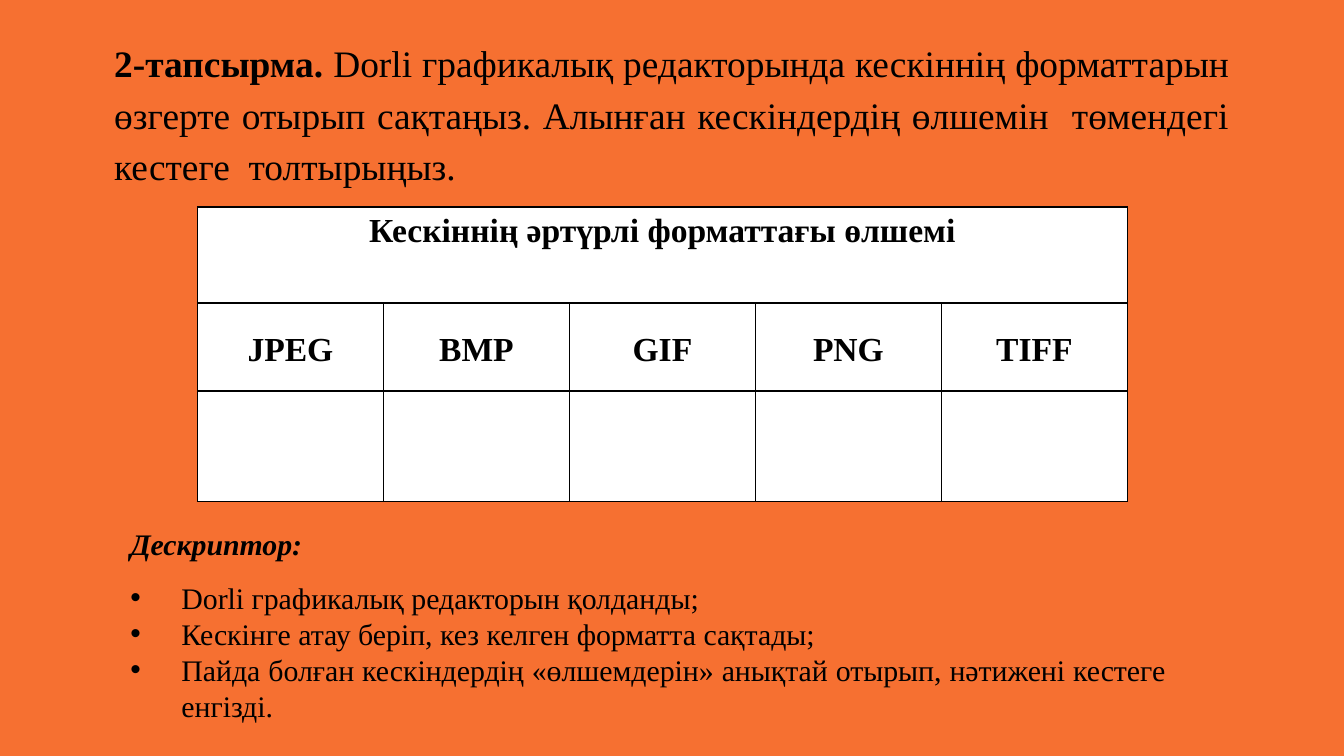
from lxml import etree
from pptx import Presentation
from pptx.dml.color import RGBColor
from pptx.enum import text
from pptx.oxml import ns
from pptx.util import Pt

# Content
TASK = [("2-тапсырма. ", True),
        ("Dorli графикалық редакторында кескіннің форматтарын өзгерте отырып "
         "сақтаңыз. Алынған кескіндердің өлшемін  төмендегі кестеге  толтырыңыз.", False)]
TABLE_HEADING = "Кескіннің әртүрлі форматтағы өлшемі"
FORMATS = ["JPEG", "BMP", "GIF", "PNG", "TIFF"]
CRITERIA_HEADING = "Дескриптор:"
CRITERIA = ["Dorli графикалық редакторын қолданды;",
            "Кескінге атау беріп, кез келген форматта сақтады;",
            "Пайда болған кескіндердің «өлшемдерін» анықтай отырып, нәтижені кестеге енгізді."]

# Style and layout, in points
FONT, ORANGE, BLACK, WHITE = "Times New Roman", "F67031", "000000", "FFFFFF"
TASK_BOX = (54, 14.4, 612, 89.3)
CRITERIA_BOX = (62.6, 275, 569.5, 117.4)
TABLE_LEFT, TABLE_TOP, TABLE_WIDTH = 105.8, 110.9, 498.2
ROW_HEIGHTS = [51.4, 47.2, 59.2]
INDENT = 27.4
ALIGN, ANCHOR = text.PP_ALIGN, text.MSO_ANCHOR


def color(value):
    return RGBColor.from_string(value)


def add_run(paragraph, content, size, bold=False, italic=False):
    run = paragraph.add_run()
    run.text = content
    font = run.font
    font.name, font.size, font.bold, font.italic = FONT, Pt(size), bold, italic
    font.color.rgb = color(BLACK)


def set_spacing(paragraph, align, line=1.15, after=10):
    paragraph.alignment = align
    paragraph.line_spacing = line
    paragraph.space_before = Pt(0)
    paragraph.space_after = Pt(after)


def add_child(parent, tag, **attributes):
    return etree.SubElement(parent, ns.qn(tag), attributes)


def set_bullet(paragraph, char=None):
    properties = paragraph._p.get_or_add_pPr()
    indent = Pt(INDENT) if char else 0
    properties.set("marL", str(indent))
    properties.set("indent", str(-indent))
    if char:
        add_child(add_child(properties, "a:buClr"), "a:srgbClr", val=BLACK)
        add_child(properties, "a:buChar", char=char)
    else:
        add_child(properties, "a:buNone")


def place(placeholder, box):
    placeholder.left, placeholder.top, placeholder.width, placeholder.height = map(Pt, box)
    frame = placeholder.text_frame
    frame.word_wrap = True
    frame.auto_size = text.MSO_AUTO_SIZE.NONE
    frame.vertical_anchor = ANCHOR.TOP
    return frame


def style_cell(cell):
    properties = cell._tc.get_or_add_tcPr()
    for side in ("a:lnL", "a:lnR", "a:lnT", "a:lnB"):
        border = add_child(properties, side, w=str(Pt(0.75)))
        add_child(add_child(border, "a:solidFill"), "a:srgbClr", val=BLACK)
    cell.fill.solid()
    cell.fill.fore_color.rgb = color(WHITE)
    cell.margin_left = cell.margin_right = Pt(5)
    cell.margin_top = cell.margin_bottom = 0


def fill_cell(cell, content, anchor):
    cell.vertical_anchor = anchor
    paragraph = cell.text_frame.paragraphs[0]
    set_spacing(paragraph, ALIGN.CENTER)
    add_run(paragraph, content, 18, bold=True)


# Slide
deck = Presentation()
deck.slide_width, deck.slide_height = Pt(720), Pt(405)
slide = deck.slides.add_slide(deck.slide_layouts[1])
slide.background.fill.solid()
slide.background.fill.fore_color.rgb = color(ORANGE)

# Task
task = place(slide.shapes.title, TASK_BOX).paragraphs[0]
set_spacing(task, ALIGN.JUSTIFY)
for content, bold in TASK:
    add_run(task, content, 20, bold)

# Criteria
criteria = place(slide.placeholders[1], CRITERIA_BOX)
heading = criteria.paragraphs[0]
set_spacing(heading, ALIGN.JUSTIFY)
set_bullet(heading)
add_run(heading, CRITERIA_HEADING, 16, bold=True, italic=True)
for criterion in CRITERIA:
    item = criteria.add_paragraph()
    set_spacing(item, ALIGN.JUSTIFY, line=1.0, after=0)
    set_bullet(item, "•")
    add_run(item, criterion, 16)

# Table of image sizes
sizes = slide.shapes.add_table(
    len(ROW_HEIGHTS), len(FORMATS), Pt(TABLE_LEFT), Pt(TABLE_TOP),
    Pt(TABLE_WIDTH), Pt(sum(ROW_HEIGHTS))).table
sizes.first_row = sizes.horz_banding = False
for row, height in zip(sizes.rows, ROW_HEIGHTS):
    row.height = Pt(height)
for cell in sizes.iter_cells():
    style_cell(cell)
sizes.cell(0, 0).merge(sizes.cell(0, len(FORMATS) - 1))
fill_cell(sizes.cell(0, 0), TABLE_HEADING, ANCHOR.TOP)
for column, name in enumerate(FORMATS):
    fill_cell(sizes.cell(1, column), name, ANCHOR.MIDDLE)

deck.save("out.pptx")
